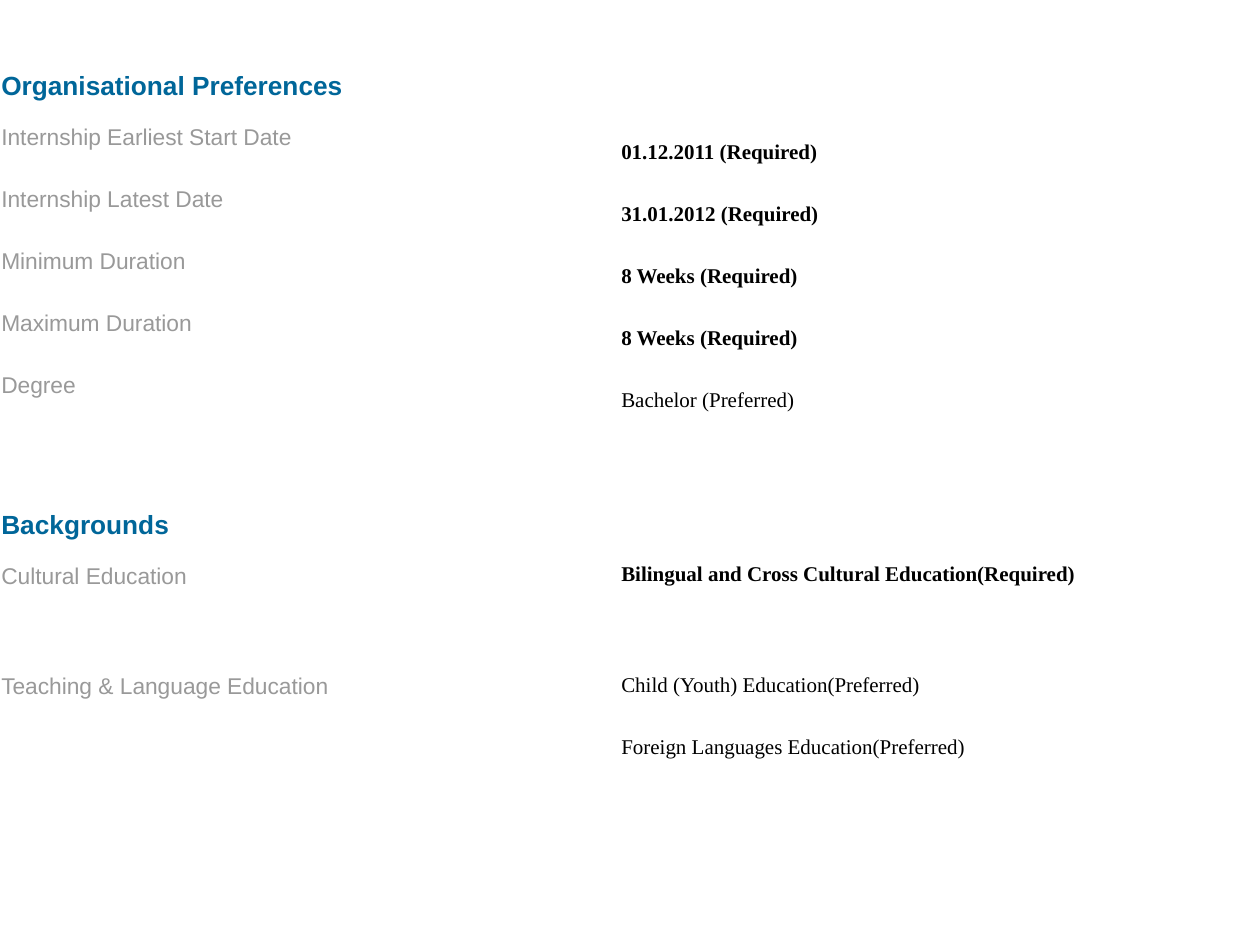
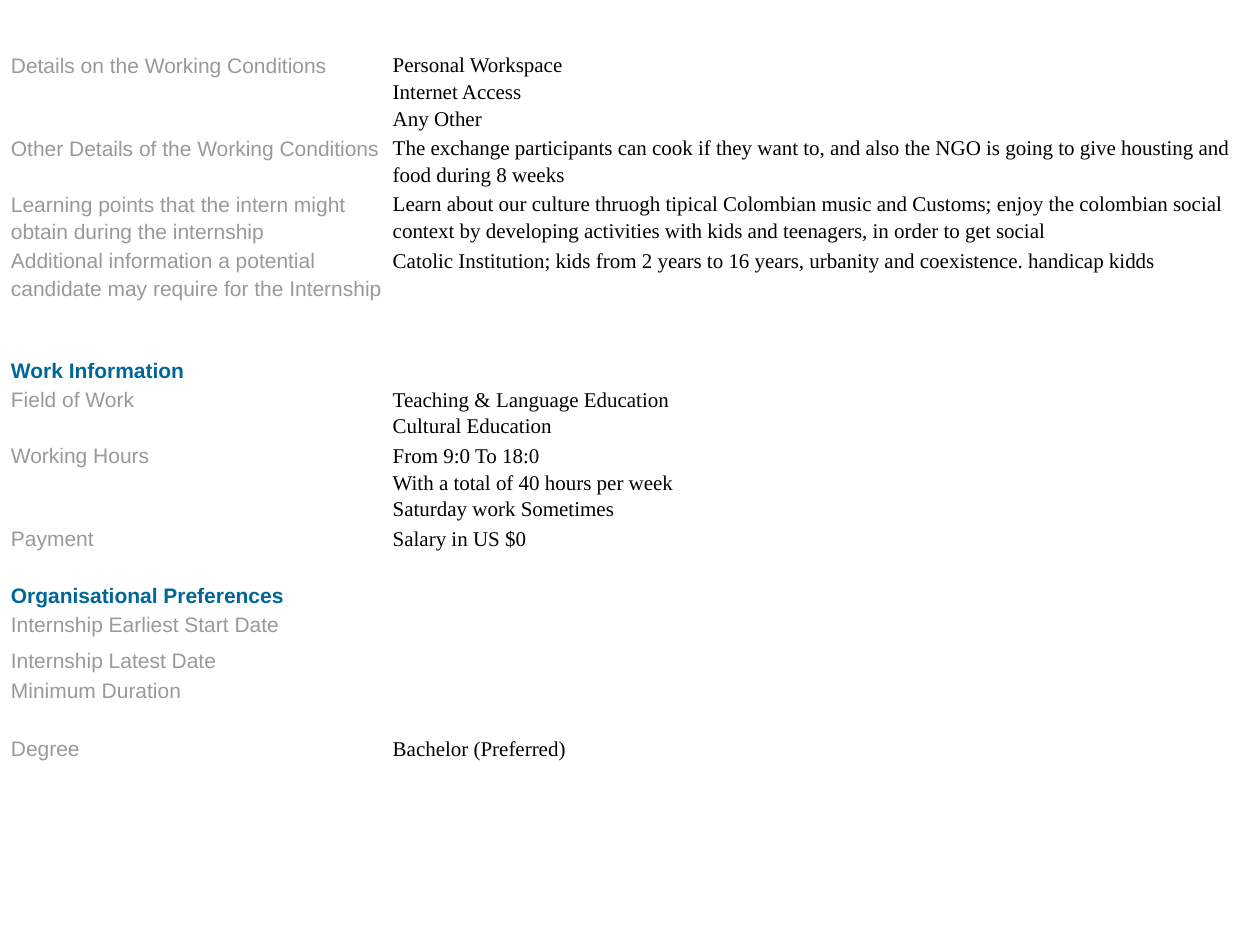
from pptx import Presentation
from pptx import util as u
from pptx.dml import color
from pptx.enum import text
from lxml import etree

COLORS = {"heading": "006699", "label": "999999", "value": "000000"}
FONTS = {"heading": "Arial", "label": "Arial", "value": "Times New Roman"}
NAMESPACE = "{http://schemas.openxmlformats.org/drawingml/2006/main}"
MARGIN = u.Pt(0.75)
TOP = 28.1
MIDDLE, UPPER = text.MSO_ANCHOR.MIDDLE, text.MSO_ANCHOR.TOP

# Slide 1 row heights
HEADING_ROW, FIELD_ROW, GAP_ROW, TALL_ROW = 40.5, 35.4, 33.2, 63
# Slide 2 text line height and cell padding
LINE, PADDING = 15.3, 1.1


def write_cell(cell, words, role, size, bold=False, anchor=UPPER):
    """Write one cell; line feeds in the words become line breaks."""
    cell.fill.background()
    cell.margin_left = cell.margin_right = MARGIN
    cell.margin_top = cell.margin_bottom = MARGIN
    cell.vertical_anchor = anchor
    para = cell.text_frame.paragraphs[0]
    if not words:
        # A small end mark keeps an empty row from growing
        etree.SubElement(para._p, NAMESPACE + "endParaRPr", sz="1000")
        return
    para.line_spacing = 1.15
    for index, line in enumerate(words.split("\n")):
        if index:
            para.add_line_break()
        span = para.add_run()
        span.text = line
        span.font.name = FONTS[role]
        span.font.size = u.Pt(size)
        span.font.bold = bold
        span.font.color.rgb = color.RGBColor.from_string(COLORS[role])


def add_form(deck, left, widths, rows, sizes):
    """Add a page with a two-column form; a row without a value spans both columns."""
    page = deck.slides.add_slide(deck.slide_layouts[6])
    heights = [row[0] for row in rows]
    frame = page.shapes.add_table(len(rows), 2, u.Pt(left), u.Pt(TOP),
                                  u.Pt(sum(widths)), u.Pt(sum(heights)))
    table = frame.table
    table.first_row = table.horz_banding = False
    for column, width in zip(table.columns, widths):
        column.width = u.Pt(width)
    for index, (height, label, value, *style) in enumerate(rows):
        table.rows[index].height = u.Pt(height)
        first, second = table.cell(index, 0), table.cell(index, 1)
        if value is None:
            write_cell(first, label, "heading", sizes["heading"], True, MIDDLE)
            write_cell(second, "", "value", sizes["value"])
            first.merge(second)
        else:
            write_cell(first, label, "label", sizes["label"])
            write_cell(second, value, "value", sizes["value"], *style)


def lines(count, label="", value=""):
    """Make a form row that is high enough for a number of text lines."""
    return count * LINE + PADDING, label, value


def heading(label):
    return lines(1, label, None)


def gap():
    return LINE, "", None


def main():
    deck = Presentation()
    deck.slide_width, deck.slide_height = u.Pt(720), u.Pt(540)

    # Preferences and backgrounds
    preferences = [
        (HEADING_ROW, "Organisational Preferences", None),
        (FIELD_ROW, "Internship Earliest Start Date", "01.12.2011 (Required)", True, MIDDLE),
        (FIELD_ROW, "Internship Latest Date", "31.01.2012 (Required)", True, MIDDLE),
        (FIELD_ROW, "Minimum Duration", "8 Weeks (Required)", True, MIDDLE),
        (FIELD_ROW, "Maximum Duration", "8 Weeks (Required)", True, MIDDLE),
        (FIELD_ROW, "Degree", "Bachelor (Preferred)", False, MIDDLE),
        (GAP_ROW, "", None),
        (HEADING_ROW, "Backgrounds", None),
        (TALL_ROW, "Cultural Education",
         "Bilingual and Cross Cultural Education(Required)", True),
        (FIELD_ROW, "Teaching & Language Education", "Child (Youth) Education(Preferred)"),
        (GAP_ROW, "", "Foreign Languages Education(Preferred)"),
    ]
    add_form(deck, 0, (354.3, 354.3), preferences,
             {"heading": 15, "label": 13, "value": 12})

    # Working conditions and work information
    conditions = [
        lines(3, "Details on the Working Conditions",
              "Personal Workspace\nInternet Access\nAny Other"),
        lines(2, "Other Details of the Working Conditions",
              "The exchange participants can cook if they want to, and also the NGO "
              "is going to give housting and food during 8 weeks"),
        lines(2, "Learning points that the intern might obtain during the internship",
              "Learn about our culture thruogh tipical Colombian music and Customs; "
              "enjoy the colombian social context by developing activities with kids "
              "and teenagers, in order to get social"),
        lines(3, "Additional information a potential candidate may require for the Internship",
              "Catolic Institution; kids from 2 years to 16 years, urbanity and "
              "coexistence. handicap kidds"),
        gap(),
        heading("Work Information"),
        lines(2, "Field of Work", "Teaching & Language Education\nCultural Education"),
        lines(3, "Working Hours",
              "From 9:0 To 18:0\nWith a total of 40 hours per week\nSaturday work Sometimes"),
        lines(1, "Payment", "Salary in US $0"),
        gap(),
        heading("Organisational Preferences"),
        lines(1.26, "Internship Earliest Start Date"),
        lines(1, "Internship Latest Date"),
        lines(1, "Minimum Duration"),
        lines(1),
        lines(1, "Degree", "Bachelor (Preferred)"),
    ]
    add_form(deck, 5.5, (218.2, 496), conditions,
             {"heading": 12, "label": 12, "value": 12})

    deck.save("out.pptx")


if __name__ == "__main__":
    main()
